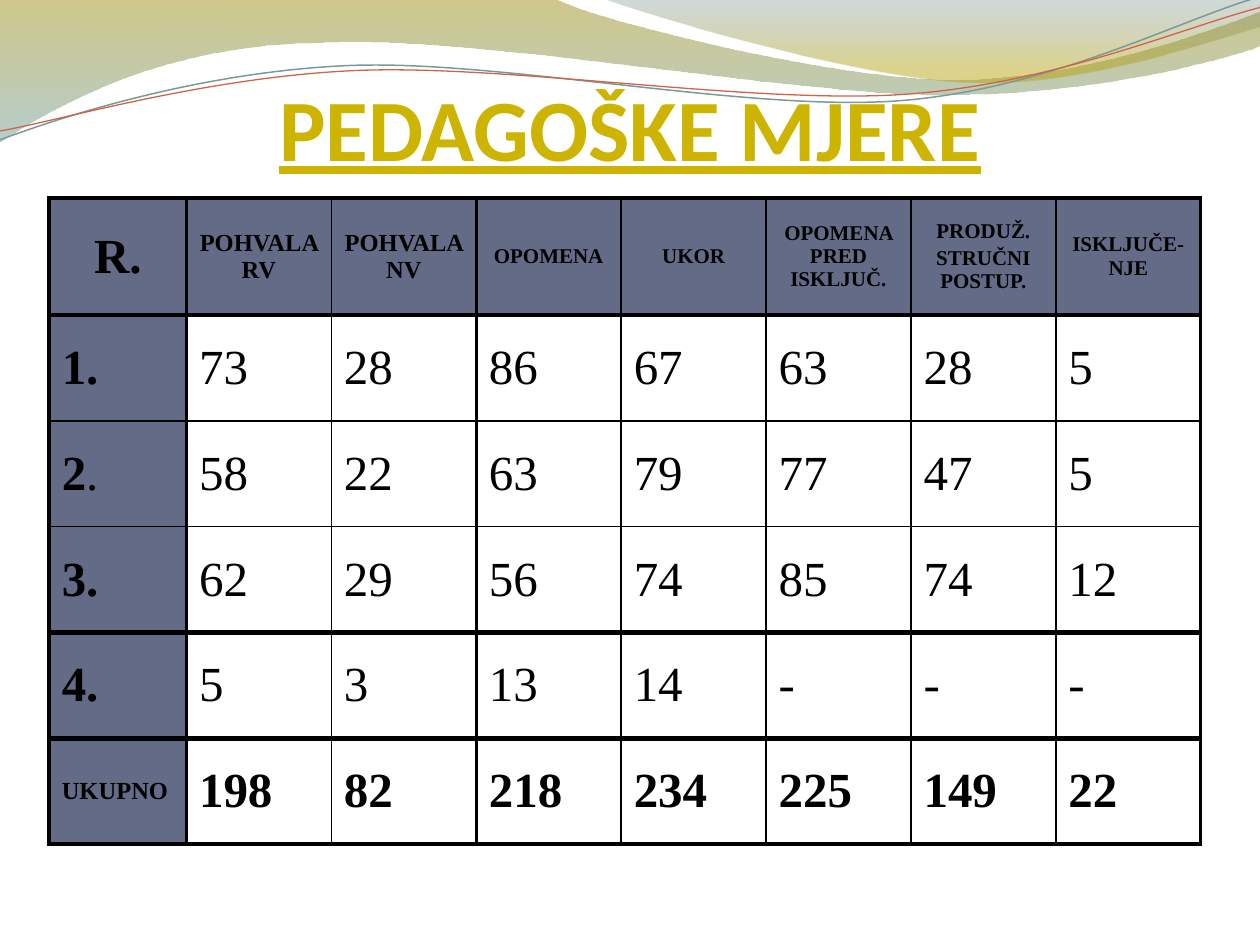
from math import cos, radians, sin

from lxml.etree import SubElement
from pptx import Presentation
from pptx.dml.color import RGBColor
from pptx.enum.text import MSO_ANCHOR as Anchor, PP_ALIGN as Align
from pptx.oxml.ns import qn
from pptx.util import Inches, Pt

BLACK = RGBColor(0x00, 0x00, 0x00)
GOLD = RGBColor(0xCC, 0xB4, 0x00)
SLATE = RGBColor(0x64, 0x6B, 0x86)
OLIVE = RGBColor(0x97, 0x85, 0x00)
AQUA = RGBColor(0x77, 0xA5, 0xA6)
TEAL = RGBColor(0x64, 0x84, 0x84)
AMBER = RGBColor(0xB4, 0x9F, 0x00)
GREY_TEAL = RGBColor(0x7C, 0x99, 0x9A)
RED = RGBColor(0xD1, 0x63, 0x49)

TITLE = "PEDAGOŠKE MJERE"
# Header texts: paragraphs and point size
HEADERS = [
    (["R."], 28), (["POHVALA RV"], 14), (["POHVALA NV"], 14), (["OPOMENA"], 12),
    (["UKOR"], 12), (["OPOMENA PRED ISKLJUČ."], 12),
    (["PRODUŽ.", "STRUČNI POSTUP."], 12), (["ISKLJUČE-NJE"], 12),
]
GRADES = [
    ("1.", [73, 28, 86, 67, 63, 28, 5]),
    ("2.", [58, 22, 63, 79, 77, 47, 5]),
    ("3.", [62, 29, 56, 74, 85, 74, 12]),
    ("4.", [5, 3, 13, 14, "-", "-", "-"]),
]
TOTALS = ("UKUPNO", [198, 82, 218, 234, 225, 149, 22])

TABLE_LEFT, TABLE_TOP = 0.39, 1.57
COLUMN_WIDTHS = [1.09] + [1.15] * 7
ROW_HEIGHTS = [0.93] + [0.84] * 5
# Rule widths in points, at each column and row boundary
VERTICAL_RULES = [2.25, 2.25, 1, 2.25, 1, 1, 1, 1, 2.25]
HORIZONTAL_RULES = [2.25, 3, 1, 1, 3, 3, 2.25]

LINE_TILT = -2.7
# Each step holds one end point (straight) or two controls and an end point (curve)
WAVES = [
    {"start": (0, -0.01),
     "steps": [[(4.4, -0.01)],
               [(4.76, 0.17), (6.64, 0.63), (7.58, 0.63)],
               [(8.53, 0.63), (9.58, 0.26), (10, 0.09)],
               [(10.01, 0.36)],
               [(9.83, 0.44), (8.7, 0.76), (7.46, 0.75)],
               [(6.22, 0.75), (3.82, 0.28), (2.57, 0.34)],
               [(1.29, 0.35), (0.46, 0.83), (-0.01, 1.13)],
               [(0, -0.01)]],
     "stops": [(0, OLIVE, 45), (1, AQUA, 55)]},
    {"start": (4.79, -0.01),
     "steps": [[(5.09, 0.11), (6.82, 0.62), (7.69, 0.65)],
               [(8.56, 0.69), (9.61, 0.32), (10, 0.21)],
               [(10, 0)],
               [(4.79, -0.01)]],
     "stops": [(0, TEAL, 30), (0.8, AMBER, 45)]},
    {"start": (0, 1.11),
     "steps": [[(0.48, 0.93), (1.58, 0.57), (2.77, 0.52)],
               [(3.95, 0.47), (5.93, 0.89), (7.13, 0.8)],
               [(8.33, 0.71), (9.38, 0.15), (9.98, -0.02)]],
     "line": (GREY_TEAL, 0.85), "pivot": (4.99, 0.58)},
    {"start": (0, 1.04),
     "steps": [[(0.47, 0.96), (1.64, 0.61), (2.83, 0.56)],
               [(4.03, 0.51), (5.97, 0.83), (7.17, 0.75)],
               [(8.36, 0.67), (9.41, 0.21), (10, 0.06)]],
     "line": (RED, 0.75), "pivot": (5, 0.59)},
]


def turn(point, pivot, degrees):
    angle = radians(degrees)
    dx, dy = point[0] - pivot[0], point[1] - pivot[1]
    return (pivot[0] + dx * cos(angle) - dy * sin(angle),
            pivot[1] + dx * sin(angle) + dy * cos(angle))


def bend(wave, steps):
    """Merge the straight segments of each three-point step into one Bézier curve."""
    segments = iter(list(wave._element.iter(qn("a:lnTo"))))
    for step in steps:
        first, *others = [next(segments) for _ in step]
        if others:
            first.tag = qn("a:cubicBezTo")
            for segment in others:
                first.append(segment[0])
                segment.getparent().remove(segment)


def add_wave(slide, start, steps, stops=None, line=None, pivot=None):
    points = [start] + [point for step in steps for point in step]
    if pivot:
        points = [turn(point, pivot, -LINE_TILT) for point in points]
    (left, top), *rest = [(Inches(x), Inches(y)) for x, y in points]
    builder = slide.shapes.build_freeform(left, top)
    builder.add_line_segments(rest, close=bool(stops))
    wave = builder.convert_to_shape()
    bend(wave, steps)
    wave.shadow.inherit = False
    if stops:
        wave.line.fill.background()
        wave.fill.gradient()
        wave.fill.gradient_angle = 270
        for stop, (position, color, opacity) in zip(wave.fill.gradient_stops, stops):
            stop.position = position
            stop.color.rgb = color
            SubElement(stop._gs[0], qn("a:alpha"), val=str(opacity * 1000))
    else:
        wave.rotation = LINE_TILT
        wave.fill.background()
        wave.line.color.rgb, wave.line.width = line[0], Pt(line[1])


def add_run(paragraph, text, color=BLACK, **formats):
    run = paragraph.add_run()
    run.text = text
    run.font.color.rgb = color
    for name, value in formats.items():
        setattr(run.font, name, value)


def write_cell(cell, paragraphs, size, align=Align.LEFT):
    """Each paragraph is a list of (text, bold) runs."""
    cell.vertical_anchor = Anchor.MIDDLE
    frame = cell.text_frame
    for index, runs in enumerate(paragraphs):
        paragraph = frame.add_paragraph() if index else frame.paragraphs[0]
        paragraph.alignment = align
        paragraph.space_before = Pt(round(size * 0.2, 1))
        for text, bold in runs:
            add_run(paragraph, text, size=Pt(size), bold=bold, name="Times New Roman")


def rule_cell(cell, row, column):
    properties = cell._tc.get_or_add_tcPr()
    widths = {"a:lnL": VERTICAL_RULES[column], "a:lnR": VERTICAL_RULES[column + 1],
              "a:lnT": HORIZONTAL_RULES[row], "a:lnB": HORIZONTAL_RULES[row + 1]}
    for tag, width in widths.items():
        rule = SubElement(properties, qn(tag), w=str(Pt(width)))
        SubElement(SubElement(rule, qn("a:solidFill")), qn("a:srgbClr"), val=str(BLACK))


def add_measures_table(slide):
    table = slide.shapes.add_table(
        len(ROW_HEIGHTS), len(COLUMN_WIDTHS), Inches(TABLE_LEFT), Inches(TABLE_TOP),
        Inches(sum(COLUMN_WIDTHS)), Inches(sum(ROW_HEIGHTS))).table
    table.first_row = table.horz_banding = False
    for column, width in zip(table.columns, COLUMN_WIDTHS):
        column.width = Inches(width)
    for row, height in zip(table.rows, ROW_HEIGHTS):
        row.height = Inches(height)

    for column, (paragraphs, size) in enumerate(HEADERS):
        write_cell(table.cell(0, column), [[(text, True)] for text in paragraphs],
                   size, Align.CENTER)
    for row, (label, counts) in enumerate(GRADES + [TOTALS], start=1):
        is_total = label == TOTALS[0]
        label_runs = [("2", True), (".", False)] if label == "2." else [(label, True)]
        write_cell(table.cell(row, 0), [label_runs], 14 if is_total else 28)
        for column, count in enumerate(counts, start=1):
            write_cell(table.cell(row, column), [[(str(count), is_total)]], 28)

    for row in range(len(ROW_HEIGHTS)):
        for column in range(len(COLUMN_WIDTHS)):
            cell = table.cell(row, column)
            rule_cell(cell, row, column)
            if row == 0 or column == 0:
                cell.fill.solid()
                cell.fill.fore_color.rgb = SLATE
            else:
                cell.fill.background()


def add_title(slide):
    frame = slide.shapes.add_textbox(
        Inches(0.75), Inches(0.42), Inches(8.5), Inches(1)).text_frame
    layout = {"word_wrap": True, "vertical_anchor": Anchor.BOTTOM, "margin_left": 0,
              "margin_top": Inches(0.05), "margin_right": 0, "margin_bottom": 0}
    for name, value in layout.items():
        setattr(frame, name, value)
    heading = frame.paragraphs[0]
    heading.alignment = Align.CENTER
    add_run(heading, TITLE, GOLD, size=Pt(50), bold=True, underline=True, name="Calibri")


def main():
    deck = Presentation()
    deck.slide_width, deck.slide_height = Inches(10), Inches(7.5)
    slide = deck.slides.add_slide(deck.slide_layouts[6])
    for wave in WAVES:
        add_wave(slide, **wave)
    add_title(slide)
    add_measures_table(slide)
    deck.save("out.pptx")


if __name__ == "__main__":
    main()
